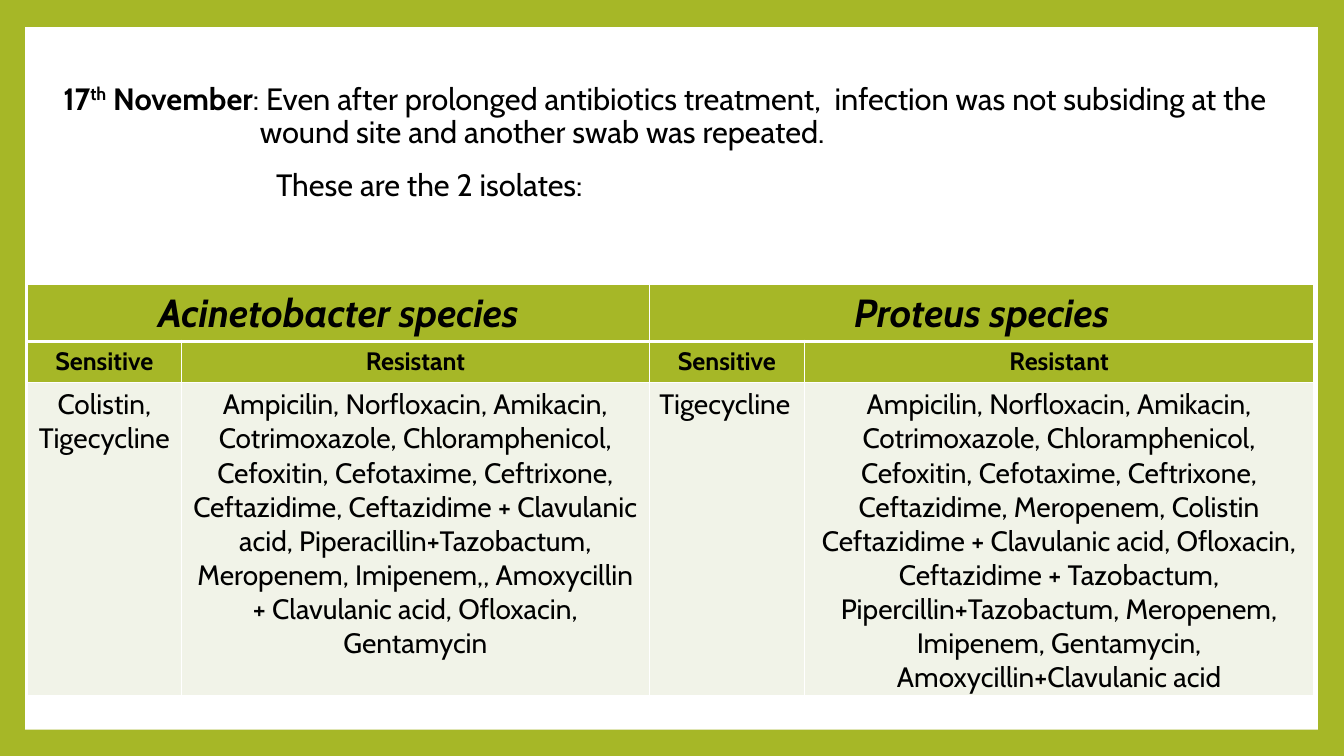
from pptx import Presentation, util as u
from pptx.dml.color import RGBColor
from pptx.enum import shapes, text
from pptx.oxml.ns import qn
from lxml import etree

NOTES = [
    (-1.95, [
        ("17", {"bold": True}),
        ("th", {"bold": True, "raised": True}),
        (" November", {"bold": True}),
        (": Even after prolonged antibiotics treatment,  infection was not "
         "subsiding at the wound site and another swab was repeated.", {}),
    ]),
    (0.16, [("These are the 2 isolates:", {})]),
]
SPECIES = ["Acinetobacter species", "Proteus species"]
HEADS = ["Sensitive", "Resistant"] * 2
DRUGS = [
    "Colistin, Tigecycline",
    "Ampicilin, Norfloxacin, Amikacin, Cotrimoxazole, Chloramphenicol, "
    "Cefoxitin, Cefotaxime, Ceftrixone, Ceftazidime, Ceftazidime + Clavulanic "
    "acid, Piperacillin+Tazobactum, Meropenem, Imipenem,, Amoxycillin + "
    "Clavulanic acid, Ofloxacin, Gentamycin",
    "Tigecycline",
    "Ampicilin, Norfloxacin, Amikacin, Cotrimoxazole, Chloramphenicol, "
    "Cefoxitin, Cefotaxime, Ceftrixone, Ceftazidime, Meropenem, Colistin "
    "Ceftazidime + Clavulanic acid, Ofloxacin, Ceftazidime + Tazobactum, "
    "Pipercillin+Tazobactum, Meropenem, Imipenem, Gentamycin, "
    "Amoxycillin+Clavulanic acid",
]
COLS = [1.53, 4.64, 1.54, 5.05]
ROWS = [0.56, 0.41, 3.1]
THEME = {
    "font": "Cabin", "ink": "000000", "green": "A6B727", "pale": "F1F3E8",
    "white": "FFFFFF", "note": 22, "title": 28, "head": 18, "body": 20,
}
CENTER, LEFT = text.PP_ALIGN.CENTER, text.PP_ALIGN.LEFT


def paint(fill, name):
    fill.solid()
    fill.fore_color.rgb = RGBColor.from_string(THEME[name])


def write(par, words, size="note", bold=False, italic=False, raised=False,
          align=LEFT):
    par.alignment = align
    run = par.add_run()
    run.text = words
    font = run.font
    font.name, font.size = THEME["font"], u.Pt(THEME[size])
    font.bold, font.italic = bold, italic
    font.color.rgb = RGBColor.from_string(THEME["ink"])
    if raised:
        run._r.get_or_add_rPr().set("baseline", "30000")


def edge(cell, row):
    props = cell._tc.get_or_add_tcPr()
    wide = {"T": 3 if row == 1 else 1, "B": 3 if row == 0 else 1}
    for side in "LRTB":
        line = etree.SubElement(props, qn(f"a:ln{side}"),
                                w=str(u.Pt(wide.get(side, 1))))
        solid = etree.SubElement(line, qn("a:solidFill"))
        etree.SubElement(solid, qn("a:srgbClr"), val=THEME["white"])


def add_notes(slide):
    box = slide.shapes.add_textbox(u.Inches(0.48), u.Inches(0.78),
                                   u.Inches(12.47), u.Inches(1.57))
    frame = box.text_frame
    frame.word_wrap = True
    for i, (indent, runs) in enumerate(NOTES):
        par = frame.paragraphs[0] if i == 0 else frame.add_paragraph()
        par.line_spacing, par.space_before = 0.9, u.Pt(14)
        props = par._p.get_or_add_pPr()
        props.set("marL", str(u.Inches(2)))
        props.set("indent", str(u.Inches(indent)))
        for words, form in runs:
            write(par, words, **form)


def add_grid(slide):
    grid = slide.shapes.add_table(
        len(ROWS), len(COLS), u.Inches(0.27), u.Inches(2.82),
        u.Inches(sum(COLS)), u.Inches(sum(ROWS))).table
    for col, width in zip(grid.columns, COLS):
        col.width = u.Inches(width)
    for row, height in zip(grid.rows, ROWS):
        row.height = u.Inches(height)
    for r in range(len(ROWS)):
        for c in range(len(COLS)):
            cell = grid.cell(r, c)
            edge(cell, r)
            paint(cell.fill, "pale" if r == 2 else "green")
    for i, name in enumerate(SPECIES):
        cell = grid.cell(0, 2 * i)
        cell.merge(grid.cell(0, 2 * i + 1))
        write(cell.text_frame.paragraphs[0], name, size="title", bold=True,
              italic=True, align=CENTER)
    for c, (head, drugs) in enumerate(zip(HEADS, DRUGS)):
        write(grid.cell(1, c).text_frame.paragraphs[0], head, size="head",
              bold=True, align=CENTER)
        write(grid.cell(2, c).text_frame.paragraphs[0], drugs, size="body",
              align=LEFT if c == 2 else CENTER)


def main():
    deck = Presentation()
    deck.slide_width, deck.slide_height = u.Inches(13.33), u.Inches(7.5)
    slide = deck.slides.add_slide(deck.slide_layouts[6])
    paint(slide.background.fill, "green")
    panel = slide.shapes.add_shape(
        shapes.MSO_SHAPE.RECTANGLE, u.Inches(0.25), u.Inches(0.27),
        u.Inches(12.82), u.Inches(6.97))
    panel.shadow.inherit = False
    paint(panel.fill, "white")
    panel.line.fill.background()
    add_notes(slide)
    add_grid(slide)
    deck.save("out.pptx")


if __name__ == "__main__":
    main()
